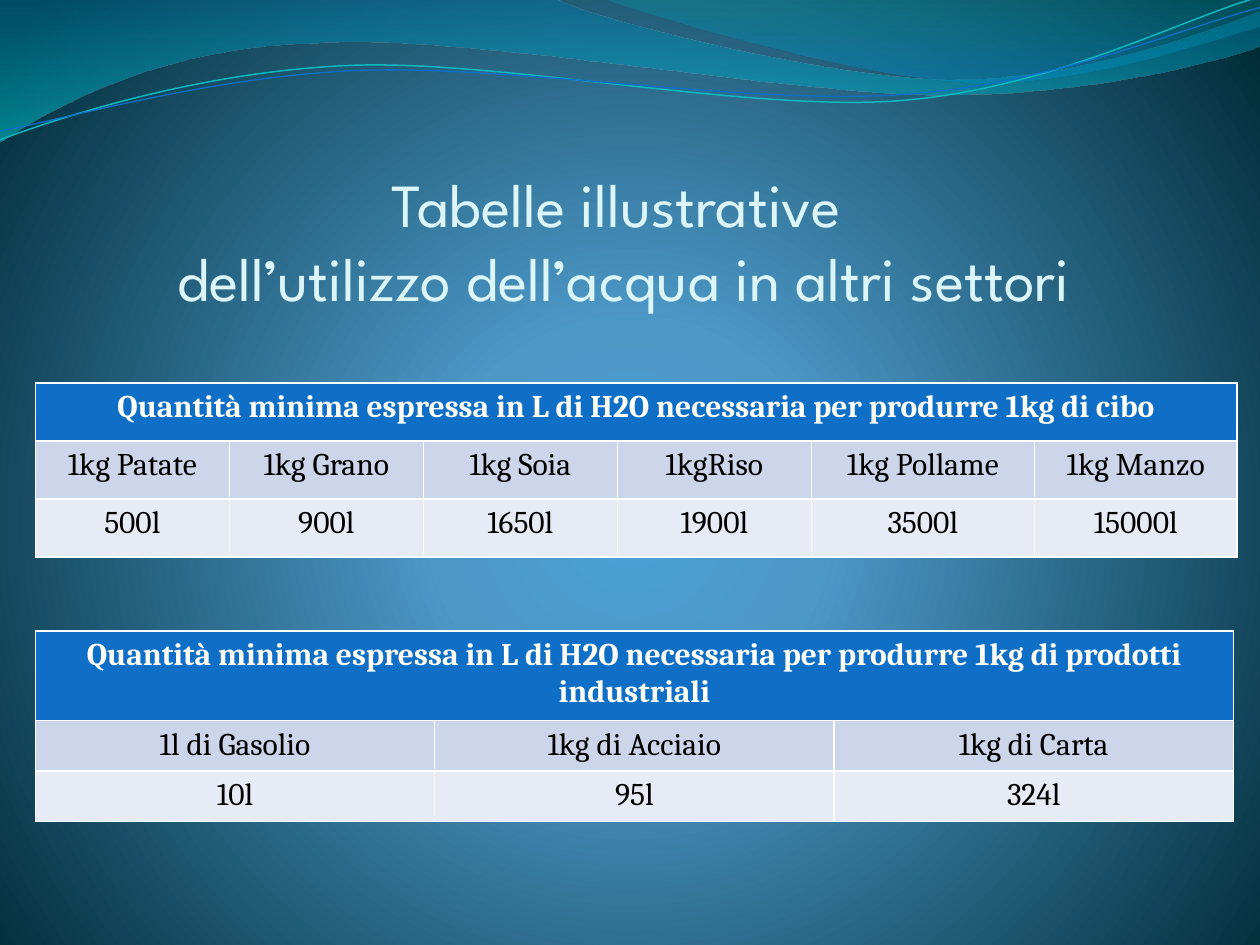
from dataclasses import dataclass
from math import cos, radians, sin

from pptx import Presentation
from pptx.dml.color import RGBColor
from pptx.enum.text import MSO_ANCHOR, PP_ALIGN
from pptx.oxml import parse_xml
from pptx.oxml.ns import nsdecls, qn
from pptx.util import Inches, Pt

COLUMNS, ROWS = 10, 7.5
UNIT = Inches(1)
LINE_TILT = -2.7

WHITE = RGBColor(0xFF, 0xFF, 0xFF)
BLACK = RGBColor(0x00, 0x00, 0x00)
PALE_CYAN = RGBColor(0xDB, 0xF5, 0xF9)
BLUE = RGBColor(0x0F, 0x6F, 0xC6)
TURQUOISE = RGBColor(0x0A, 0xB8, 0xBF)
LABEL_FILL = RGBColor(0xCC, 0xD5, 0xEA)
VALUE_FILL = RGBColor(0xE7, 0xEB, 0xF5)
SKY = RGBColor(0x4A, 0xA0, 0xD6)
MID_BLUE = RGBColor(0x4C, 0x98, 0xC7)
DEEP_TEAL = RGBColor(0x00, 0x2C, 0x38)
WAVE_BLUE = RGBColor(0x00, 0x74, 0xA1)
WAVE_AQUA = RGBColor(0x00, 0xC6, 0xCF)
CREST_TEAL = RGBColor(0x00, 0xA1, 0xA9)
CREST_BLUE = RGBColor(0x00, 0x8B, 0xBF)

RADIAL = ('<a:path path="circle"><a:fillToRect l="10000" t="110000" '
          'r="10000" b="100000"/></a:path>')
DOWNWARD = '<a:lin ang="5400000" scaled="0"/>'

BROAD_WAVE = [
    [(0, 0)], [(4.4, -0.01)],
    [(4.76, 0.17), (6.64, 0.63), (7.58, 0.63)],
    [(8.53, 0.63), (9.58, 0.26), (10, 0.09)],
    [(10.01, 0.36)],
    [(9.83, 0.44), (8.7, 0.76), (7.46, 0.75)],
    [(6.22, 0.75), (3.82, 0.28), (2.57, 0.34)],
    [(1.29, 0.36), (0.46, 0.83), (-0.01, 1.13)],
    [(0, 0)],
]
CREST = [
    [(4.79, -0.01)],
    [(5.09, 0.11), (6.82, 0.62), (7.69, 0.65)],
    [(8.56, 0.69), (9.61, 0.32), (10, 0.21)],
    [(10, 0)], [(4.79, -0.01)],
]
TURQUOISE_LINE = [
    [(0, 1.11)],
    [(0.48, 0.93), (1.58, 0.57), (2.77, 0.52)],
    [(3.95, 0.47), (5.93, 0.89), (7.13, 0.8)],
    [(8.33, 0.71), (9.38, 0.15), (9.98, -0.02)],
]
BLUE_LINE = [
    [(0, 1.04)],
    [(0.47, 0.96), (1.64, 0.61), (2.83, 0.56)],
    [(4.03, 0.51), (5.97, 0.84), (7.17, 0.75)],
    [(8.36, 0.67), (9.41, 0.21), (10, 0.06)],
]


@dataclass
class Box:
    left: float
    top: float
    width: float
    height: float

    def lengths(self):
        return [grid(n) for n in (self.left, self.top, self.width, self.height)]

    def inner(self, left, top, width, height):
        return Box(self.left + left, self.top + top, width, height)


def grid(count):
    return round(count * UNIT)


def set_gradient(fill, element, stops, direction):
    fill.gradient()
    stop_list = "".join(
        f'<a:gs pos="{position * 1000}"><a:srgbClr val="{color}">'
        f'<a:alpha val="{opacity * 1000}"/></a:srgbClr></a:gs>'
        for position, color, opacity in stops)
    gradient = parse_xml(f'<a:gradFill {nsdecls("a")} rotWithShape="1">'
                         f'<a:gsLst>{stop_list}</a:gsLst>{direction}</a:gradFill>')
    default = element.find(".//" + qn("a:gradFill"))
    default.getparent().replace(default, gradient)


def local_point(point, frame, tilt):
    angle = radians(-tilt)
    x = point[0] - frame.left - frame.width / 2
    y = point[1] - frame.top - frame.height / 2
    return (grid(x * cos(angle) - y * sin(angle) + frame.width / 2),
            grid(x * sin(angle) + y * cos(angle) + frame.height / 2))


def add_curve(slide, box, frame, steps, closed, tilt=0):
    left, top, width, height = box.inner(
        frame.left, frame.top, frame.width, frame.height).lengths()
    builder = slide.shapes.build_freeform(left, top)
    builder.add_line_segments([(left + width, top + height)], close=False)
    shape = builder.convert_to_shape()
    shape.shadow.inherit = False
    shape.rotation = tilt
    commands = ""
    for index, step in enumerate(steps):
        tag = "moveTo" if index == 0 else "lnTo" if len(step) == 1 else "cubicBezTo"
        points = "".join('<a:pt x="{}" y="{}"/>'.format(*local_point(point, frame, tilt))
                         for point in step)
        commands += f"<a:{tag}>{points}</a:{tag}>"
    if closed:
        commands += "<a:close/>"
    outline = parse_xml(f'<a:path {nsdecls("a")} w="{width}" h="{height}">{commands}</a:path>')
    straight = shape.element.find(".//" + qn("a:path"))
    straight.getparent().replace(straight, outline)
    return shape


def add_waves(slide, box):
    for frame, steps, stops in (
            (Box(-0.01, -0.01, 10.02, 1.14), BROAD_WAVE,
             [(0, WAVE_BLUE, 45), (100, WAVE_AQUA, 55)]),
            (Box(4.79, -0.01, 5.21, 0.7), CREST,
             [(0, CREST_TEAL, 30), (80, CREST_BLUE, 45)])):
        shape = add_curve(slide, box, frame, steps, True)
        set_gradient(shape.fill, shape.element, stops, DOWNWARD)
        shape.line.fill.background()
    for frame, steps, color, width in (
            (Box(-0.02, 0.22, 10.02, 0.71), TURQUOISE_LINE, TURQUOISE, 0.85),
            (Box(-0.02, 0.3, 10.03, 0.58), BLUE_LINE, BLUE, 0.75)):
        shape = add_curve(slide, box, frame, steps, False, LINE_TILT)
        shape.fill.background()
        shape.line.color.rgb = color
        shape.line.width = Pt(width)


def style_paragraph(paragraph, text, font, size, color):
    paragraph.text = text
    paragraph.alignment = PP_ALIGN.CENTER
    paragraph.font.name = font
    paragraph.font.size = Pt(size)
    paragraph.font.color.rgb = color


def add_title(slide, box, text):
    frame = slide.shapes.add_textbox(*box.lengths()).text_frame
    frame.word_wrap = True
    frame.vertical_anchor = MSO_ANCHOR.BOTTOM
    frame.margin_left = frame.margin_right = frame.margin_bottom = 0
    style_paragraph(frame.paragraphs[0], text, "League Spartan", 35, PALE_CYAN)


def style_cell(cell, text, row):
    cell.fill.solid()
    cell.fill.fore_color.rgb = (BLUE, LABEL_FILL, VALUE_FILL)[row]
    paragraph = cell.text_frame.paragraphs[0]
    style_paragraph(paragraph, text, "Cambria", 18, BLACK if row else WHITE)
    paragraph.font.bold = row == 0


def add_water_table(slide, box, heading, amounts, widths, heights):
    table = slide.shapes.add_table(3, len(amounts), *box.lengths()).table
    for column, width in zip(table.columns, widths):
        column.width = grid(width)
    for row, height in zip(table.rows, heights):
        row.height = grid(height)
    table.cell(0, 0).merge(table.cell(0, len(amounts) - 1))
    for row, texts in enumerate(([heading], amounts.keys(), amounts.values())):
        for column, text in enumerate(texts):
            style_cell(table.cell(row, column), text, row)


def main():
    presentation = Presentation()
    presentation.slide_width = grid(COLUMNS)
    presentation.slide_height = grid(ROWS)
    slide = presentation.slides.add_slide(presentation.slide_layouts[6])
    set_gradient(slide.background.fill, slide.element,
                 [(0, SKY, 100), (25, MID_BLUE, 100), (100, DEEP_TEAL, 100)], RADIAL)
    add_waves(slide, Box(0, 0, COLUMNS, 1.13))
    add_title(slide, Box(0.35, 1.23, 9.21, 1.26),
              "Tabelle illustrative \vdell’utilizzo dell’acqua in altri settori")
    heading = "Quantità minima espressa in L di H2O necessaria per produrre 1kg di "
    add_water_table(slide, Box(0.28, 3.04, 9.53, 1.37), heading + "cibo",
                    {"1kg Patate": "500l", "1kg Grano": "900l", "1kg Soia": "1650l",
                     "1kgRiso": "1900l", "1kg Pollame": "3500l", "1kg Manzo": "15000l"},
                    [1.54] * 4 + [1.77, 1.61], [0.46] * 3)
    add_water_table(slide, Box(0.28, 5.01, 9.5, 1.51), heading + "prodotti industriali",
                    {"1l di Gasolio": "10l", "1kg di Acciaio": "95l", "1kg di Carta": "324l"},
                    [3.17] * 3, [0.71, 0.39, 0.39])
    presentation.save("out.pptx")


if __name__ == "__main__":
    main()
